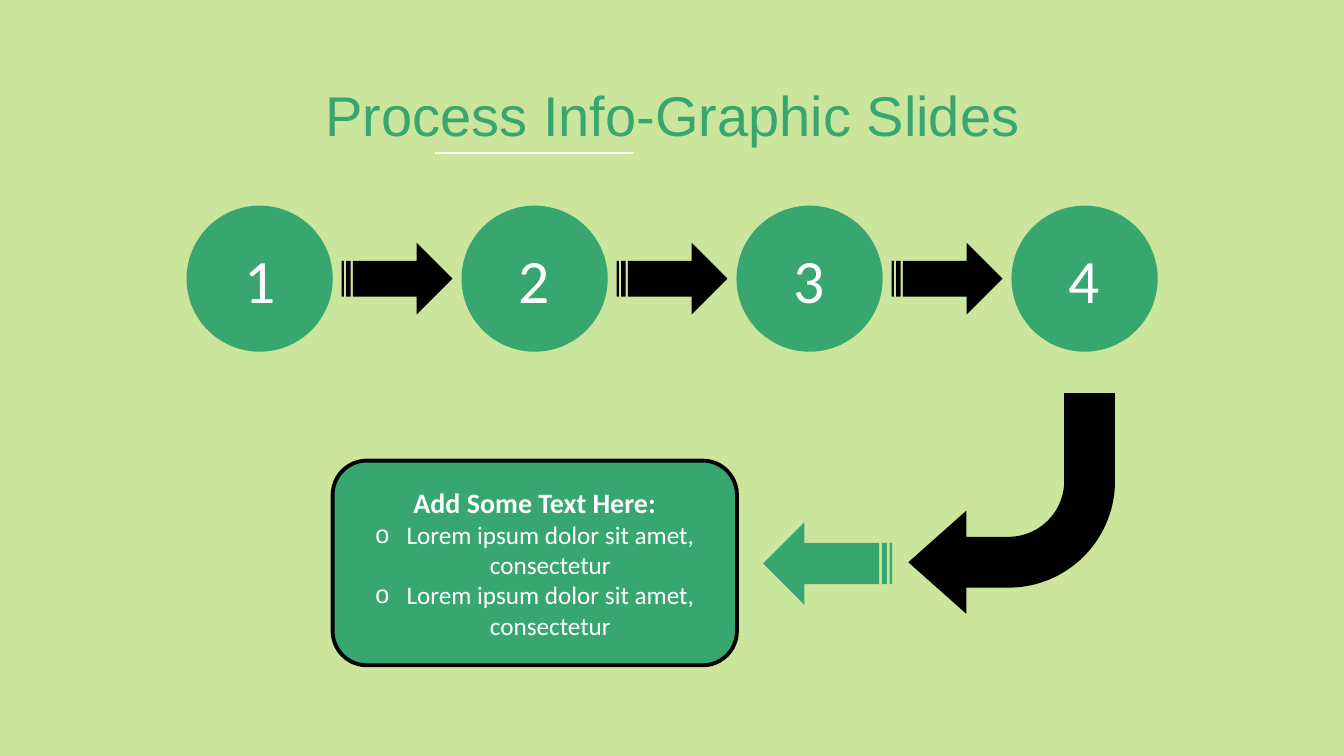
"""Build a four-step process slide that leads to a text callout."""
from dataclasses import dataclass

from lxml.etree import SubElement
from pptx import Presentation
from pptx.dml.color import RGBColor
from pptx.enum.shapes import MSO_CONNECTOR, MSO_SHAPE
from pptx.enum.text import MSO_ANCHOR, MSO_AUTO_SIZE, PP_ALIGN
from pptx.oxml.ns import qn
from pptx.shapes.autoshape import Shape
from pptx.slide import Slide
from pptx.text.text import _Paragraph
from pptx.util import Inches, Pt

SLIDE_WIDTH, SLIDE_HEIGHT = Inches(13.33), Inches(7.5)
GREEN, BLACK, WHITE, PALE_GREEN = "37A76F", "000000", "FFFFFF", "CCE59C"
STEP_COUNT, STEP_PITCH = 4, 20.46
BULLET_INDENT = Inches(0.31)


@dataclass(frozen=True)
class Area:
    """Position and size in percent of the slide."""
    left: float
    top: float
    width: float
    height: float

    def shifted(self, distance: float) -> "Area":
        return Area(self.left + distance, self.top, self.width, self.height)

    def box(self) -> tuple[int, int, int, int]:
        return (across(self.left), down(self.top),
                across(self.width), down(self.height))


@dataclass(frozen=True)
class Figure:
    """A filled preset shape."""
    kind: MSO_SHAPE
    area: Area
    fill: str
    rotation: float = 0
    adjustments: tuple[float, ...] = ()


@dataclass(frozen=True)
class Line:
    """A paragraph with its look."""
    text: str
    size: float
    font: str = "Calibri"
    color: str = WHITE
    bold: bool = False
    bulleted: bool = False


FIRST_STEP = Area(13.88, 27.2, 10.88, 19.33)
FIRST_ARROW = Area(25.42, 32.13, 8.25, 9.47)
TURN = Figure(MSO_SHAPE.BENT_ARROW, Area(67.58, 52, 15.38, 29.2), BLACK, 180,
              (0.246, 0.25, 0.281, 0.516))
RETURN_ARROW = Figure(MSO_SHAPE.STRIPED_RIGHT_ARROW,
                      Area(56.78, 69.07, 9.6, 10.93), GREEN, 180)
CALLOUT = Figure(MSO_SHAPE.ROUNDED_RECTANGLE,
                 Area(24.75, 60.93, 30.08, 27.07), GREEN)
DETAIL = Line("Lorem ipsum dolor sit amet, consectetur", 18, bulleted=True)
CALLOUT_LINES = [Line("Add Some Text Here:", 20, bold=True), DETAIL, DETAIL]
TITLE = Line("Process Info-Graphic Slides", 40, "Arial", GREEN)
TITLE_AREA = Area(21.08, 10, 57.9, 10.27)


def across(percent: float) -> int:
    return round(SLIDE_WIDTH * percent / 100)


def down(percent: float) -> int:
    return round(SLIDE_HEIGHT * percent / 100)


def rgb(color: str) -> RGBColor:
    return RGBColor.from_string(color)


def add_bullet(paragraph: _Paragraph) -> None:
    properties = paragraph._p.get_or_add_pPr()
    properties.set("marL", str(BULLET_INDENT))
    properties.set("indent", str(-BULLET_INDENT))
    SubElement(properties, qn("a:buFont"), typeface="Arial")
    SubElement(properties, qn("a:buChar"), char="o")


def write(shape: Shape, lines: list[Line], anchor: MSO_ANCHOR) -> None:
    frame = shape.text_frame
    frame.word_wrap = True
    frame.vertical_anchor = anchor
    frame.text = "\n".join(line.text for line in lines)
    for paragraph, line in zip(frame.paragraphs, lines):
        paragraph.alignment = PP_ALIGN.CENTER
        if line.bulleted:
            add_bullet(paragraph)
        paragraph.font.name = line.font
        paragraph.font.size = Pt(line.size)
        paragraph.font.bold = line.bold
        paragraph.font.color.rgb = rgb(line.color)


def draw(slide: Slide, figure: Figure) -> Shape:
    shape = slide.shapes.add_shape(figure.kind, *figure.area.box())
    shape.shadow.inherit = False
    shape.fill.solid()
    shape.fill.fore_color.rgb = rgb(figure.fill)
    shape.line.fill.background()
    shape.rotation = figure.rotation
    for index, value in enumerate(figure.adjustments):
        shape.adjustments[index] = value
    return shape


def draw_steps(slide: Slide) -> None:
    for index in range(STEP_COUNT):
        area = FIRST_STEP.shifted(index * STEP_PITCH)
        step = draw(slide, Figure(MSO_SHAPE.OVAL, area, GREEN))
        write(step, [Line(str(index + 1), 44)], MSO_ANCHOR.MIDDLE)
    for index in range(STEP_COUNT - 1):
        area = FIRST_ARROW.shifted(index * STEP_PITCH)
        draw(slide, Figure(MSO_SHAPE.STRIPED_RIGHT_ARROW, area, BLACK))


def draw_callout(slide: Slide) -> None:
    callout = draw(slide, CALLOUT)
    callout.line.color.rgb = rgb(BLACK)
    callout.line.width = Pt(2.75)
    write(callout, CALLOUT_LINES, MSO_ANCHOR.MIDDLE)


def draw_title(slide: Slide) -> None:
    title = slide.shapes.title
    title.left, title.top, title.width, title.height = TITLE_AREA.box()
    write(title, [TITLE], MSO_ANCHOR.TOP)
    title.text_frame.auto_size = MSO_AUTO_SIZE.SHAPE_TO_FIT_TEXT
    underline = slide.shapes.add_connector(
        MSO_CONNECTOR.STRAIGHT,
        across(32.4), down(20.27), across(47.18), down(20.27))
    underline.line.color.rgb = rgb(WHITE)
    underline.line.width = Pt(1.5)
    SubElement(underline._element.spPr, qn("a:effectLst"))


def main() -> None:
    presentation = Presentation()
    presentation.slide_width = SLIDE_WIDTH
    presentation.slide_height = SLIDE_HEIGHT
    slide = presentation.slides.add_slide(presentation.slide_layouts[5])
    slide.background.fill.solid()
    slide.background.fill.fore_color.rgb = rgb(PALE_GREEN)
    draw_steps(slide)
    draw(slide, TURN)
    draw(slide, RETURN_ARROW)
    draw_callout(slide)
    draw_title(slide)
    presentation.save("out.pptx")


if __name__ == "__main__":
    main()
